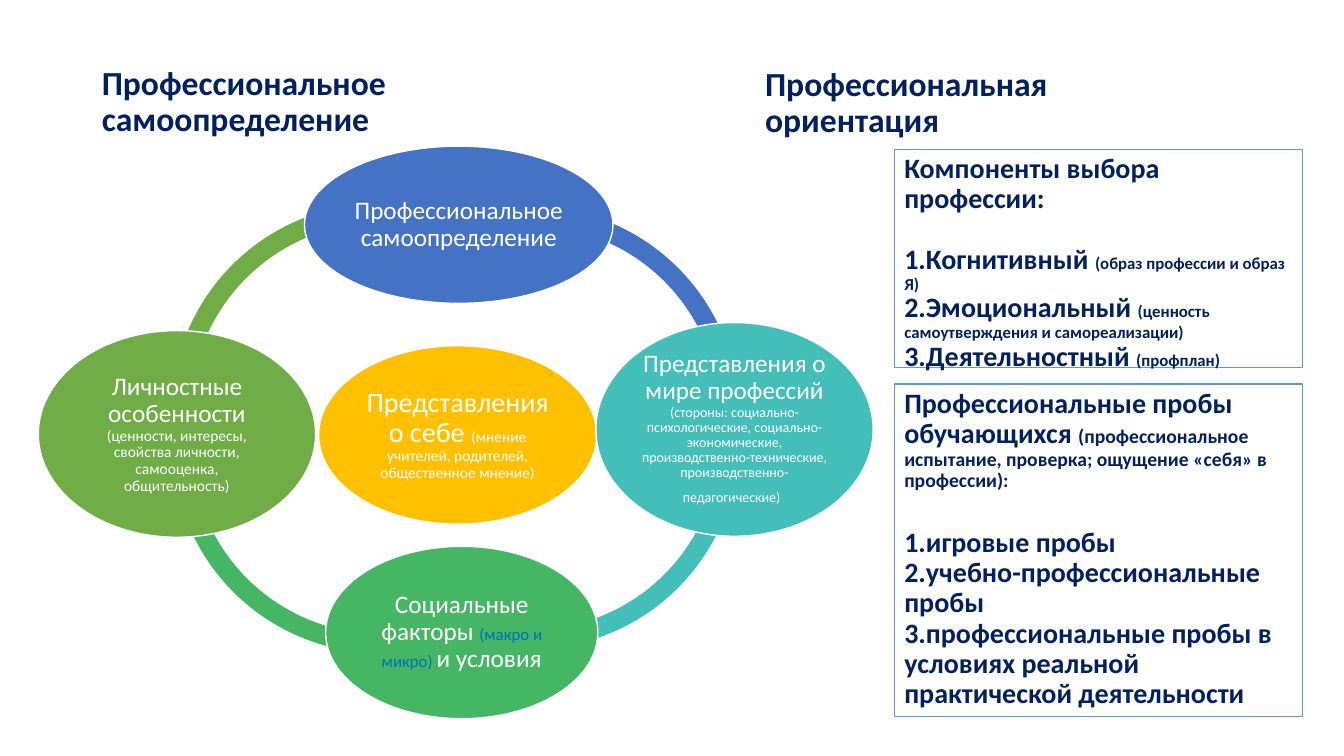
from pptx import Presentation
from pptx.dml.color import RGBColor
from pptx.enum.shapes import MSO_SHAPE
from pptx.enum.text import MSO_ANCHOR, MSO_AUTO_SIZE, PP_ALIGN
from pptx.util import Inches, Pt

NAVY = RGBColor(0x00, 0x20, 0x60)
WHITE = RGBColor(0xFF, 0xFF, 0xFF)
BLUE = RGBColor(0x44, 0x72, 0xC4)
TEAL = RGBColor(0x43, 0xBE, 0xB9)
GREEN = RGBColor(0x45, 0xB6, 0x64)
OLIVE = RGBColor(0x70, 0xAD, 0x47)
AMBER = RGBColor(0xFF, 0xC0, 0x00)
FRAME_BLUE = RGBColor(0x5B, 0x9B, 0xD5)
NOTE_BLUE = RGBColor(0x00, 0x70, 0xC0)


def write_text(frame, paragraphs, color=NAVY, bold=True, align=PP_ALIGN.LEFT,
               anchor=MSO_ANCHOR.TOP, inset=None, gaps=None):
    """Each paragraph is a list of (text, size[, color]) runs; gaps maps its index to space before."""
    frame.word_wrap = True
    frame.auto_size = MSO_AUTO_SIZE.NONE
    frame.vertical_anchor = anchor
    if inset is not None:
        frame.margin_left = frame.margin_right = Inches(inset)
        frame.margin_top = frame.margin_bottom = Inches(inset)
    for index, runs in enumerate(paragraphs):
        paragraph = frame.paragraphs[0] if index == 0 else frame.add_paragraph()
        paragraph.alignment = align
        paragraph.line_spacing = 0.9
        paragraph.space_before = Pt((gaps or {}).get(index, 0))
        paragraph.space_after = Pt(0)
        for words, size, *own_color in runs:
            run = paragraph.add_run()
            run.text = words
            run.font.name = "Calibri"
            run.font.size = Pt(size)
            run.font.bold = bold
            run.font.color.rgb = own_color[0] if own_color else color


class OrientationSlide:
    arc_size = 4.14
    arc_thickness = 0.046
    panel_left, panel_width = 8.87, 4.05

    def __init__(self, deck):
        self.slide = deck.slides.add_slide(deck.slide_layouts[5])
        self.shapes = self.slide.shapes

    def title(self, left, top, width, height, words):
        heading = self.shapes.title
        heading.left, heading.top = Inches(left), Inches(top)
        heading.width, heading.height = Inches(width), Inches(height)
        write_text(heading.text_frame, [[(words, 24)]], anchor=MSO_ANCHOR.MIDDLE)

    def heading(self, left, top, width, height, lines):
        box = self.shapes.add_textbox(*map(Inches, (left, top, width, height)))
        write_text(box.text_frame, [[(line, 24)] for line in lines], anchor=MSO_ANCHOR.MIDDLE)

    def preset(self, kind, left, top, width, height, fill=None, line=None, line_width=1):
        shape = self.shapes.add_shape(kind, *map(Inches, (left, top, width, height)))
        shape.shadow.inherit = False
        if fill is None:
            shape.fill.background()
        else:
            shape.fill.solid()
            shape.fill.fore_color.rgb = fill
        if line is None:
            shape.line.fill.background()
        else:
            shape.line.color.rgb = line
            shape.line.width = Pt(line_width)
        return shape

    def arc(self, left, top, start, end, fill):
        band = self.preset(MSO_SHAPE.BLOCK_ARC, left, top, self.arc_size, self.arc_size, fill)
        for index, value in enumerate((start, end, self.arc_thickness)):
            band.adjustments[index] = value

    def oval(self, left, top, width, height, fill, runs):
        ellipse = self.preset(MSO_SHAPE.OVAL, left, top, width, height, fill, WHITE)
        write_text(ellipse.text_frame, [runs], color=WHITE, bold=False,
                   align=PP_ALIGN.CENTER, anchor=MSO_ANCHOR.MIDDLE, inset=0.03)

    def panel(self, top, height, paragraphs, gaps):
        frame = self.preset(MSO_SHAPE.RECTANGLE, self.panel_left, top, self.panel_width,
                            height, line=FRAME_BLUE, line_width=0.75)
        write_text(frame.text_frame, paragraphs, gaps=gaps)


def main():
    deck = Presentation()
    deck.slide_width, deck.slide_height = Inches(13.33), Inches(7.5)
    page = OrientationSlide(deck)

    # Headings
    page.title(0.91, 0.7, 3.16, 0.63, "Профессиональное самоопределение")
    page.heading(7.49, 0.73, 3.96, 0.6, ["Профессиональная", "ориентация"])

    # Ring of arcs behind the ovals
    for arc in [
        (1.7, 2.02, 104.42, 175.62, OLIVE),
        (1.71, 2.34, 39.99, 109.9, GREEN),
        (3.19, 2.3, 214.1, 65.8, TEAL),
        (3.19, 2.05, 149.66, 2.3, BLUE),
    ]:
        page.arc(*arc)

    # Centre oval and the four around it
    page.oval(3.16, 3.43, 2.76, 1.77, AMBER, [
        ("Представления о себе ", 20),
        ("(мнение учителей, родителей, общественное мнение)", 11)])
    page.oval(3.02, 1.45, 3.06, 1.56, BLUE, [("Профессиональное самоопределение", 18)])
    page.oval(5.91, 3.2, 2.75, 2.12, TEAL, [
        ("Представления о мире профессий ", 18),
        ("(стороны: социально-психологические, социально-экономические, "
         "производственно-технические, производственно-педагогические)", 10),
        (" ", 18)])
    page.oval(3.23, 5.42, 2.7, 1.71, GREEN, [
        ("Социальные факторы ", 18),
        ("(макро и микро) ", 12, NOTE_BLUE),
        ("и условия", 18)])
    page.oval(0.38, 3.28, 2.75, 2.05, OLIVE, [
        ("Личностные особенности ", 18),
        ("(ценности, интересы, свойства личности, самооценка, общительность)", 11)])

    # Panels on the right
    page.panel(1.48, 2.17, [
        [("Компоненты выбора профессии:", 20)],
        [("1.Когнитивный ", 20), ("(образ профессии и образ Я)", 12)],
        [("2.Эмоциональный ", 20), ("(ценность самоутверждения и самореализации)", 12)],
        [("3.Деятельностный ", 20), ("(профплан)", 12)],
    ], gaps={1: 22})
    page.panel(3.81, 3.3, [
        [("Профессиональные пробы обучающихся ", 20),
         ("(профессиональное испытание, проверка; ощущение «себя» в профессии):", 14)],
        [("1.игровые пробы", 20)],
        [("2.учебно-профессиональные пробы", 20)],
        [("3.профессиональные пробы в условиях реальной практической деятельности", 20)],
    ], gaps={1: 26})

    deck.save("out.pptx")


if __name__ == "__main__":
    main()
